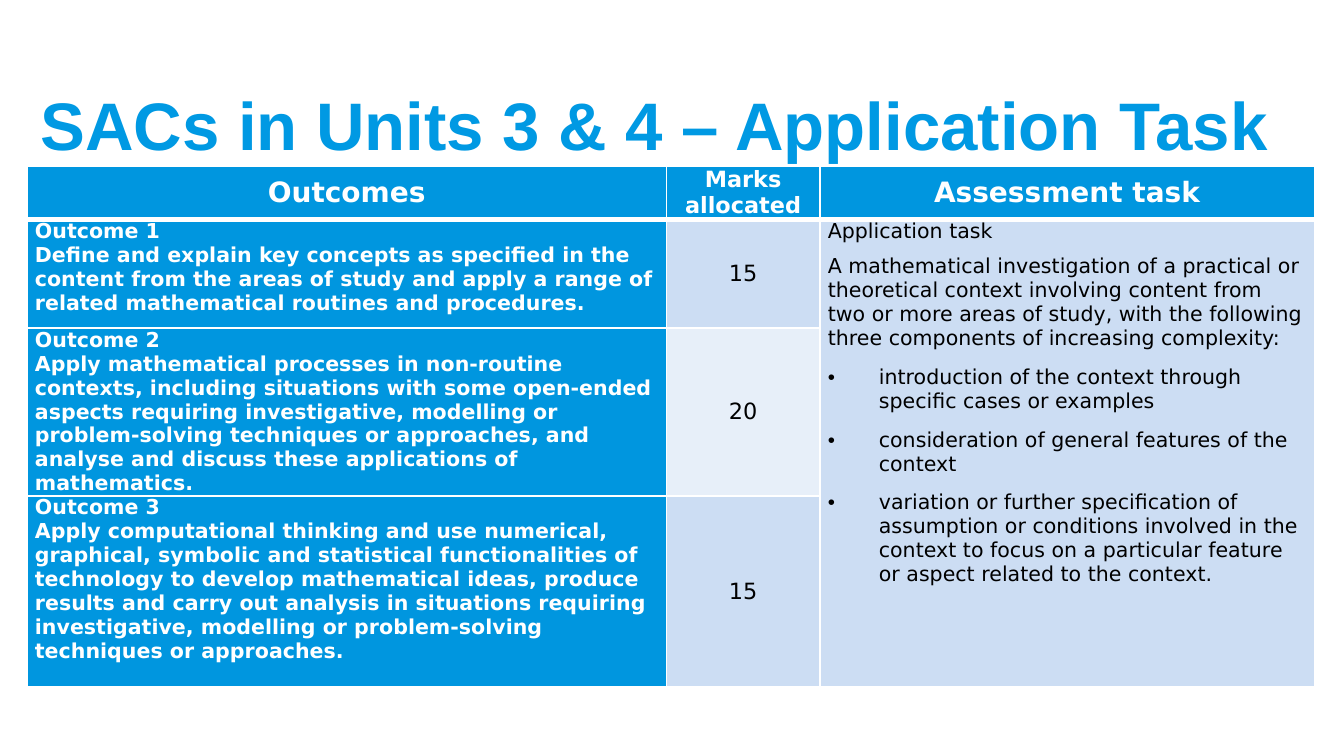
import pptx
import pptx.dml.color
import pptx.enum.text
import pptx.oxml
import pptx.oxml.ns
import pptx.util
from pptx.util import Inches

ALIGN = pptx.enum.text.PP_ALIGN
ANCHOR = pptx.enum.text.MSO_ANCHOR
NAMESPACE = pptx.oxml.ns.nsdecls("a")
WHITE, BLACK = "FFFFFF", "000000"
TITLE_BLUE, BLUE, LIGHT, PALE = "0099E3", "0096DF", "CCDDF3", "E7EFF9"
COLUMN_WIDTHS = [4.76, 1.14, 3.68]
ROW_HEIGHTS = [0.36, 0.81, 1.08, 1.42]
HEADER_BORDERS = {"lnL": 1, "lnR": 1, "lnT": 1, "lnB": 3}

HEADERS = [("Outcomes", 15, ANCHOR.MIDDLE), ("Marks allocated", 12, ANCHOR.TOP),
           ("Assessment task", 15, ANCHOR.MIDDLE)]
OUTCOMES = [
    ("Outcome 1", "Define and explain key concepts as specified in the content from the areas of "
     "study and apply a range of related mathematical routines and procedures.", "15", LIGHT),
    ("Outcome 2", "Apply mathematical processes in non-routine contexts, including situations with "
     "some open-ended aspects requiring investigative, modelling or problem-solving techniques or "
     "approaches, and analyse and discuss these applications of mathematics.", "20", PALE),
    ("Outcome 3", "Apply computational thinking and use numerical, graphical, symbolic and "
     "statistical functionalities of technology to develop mathematical ideas, produce results and "
     "carry out analysis in situations requiring investigative, modelling or problem-solving "
     "techniques or approaches.", "15", LIGHT),
]
TASK = "Application task"
TASK_SUMMARY = ("A mathematical investigation of a practical or theoretical context involving "
                "content from two or more areas of study, with the following three components of "
                "increasing complexity:")
COMPONENTS = [
    "introduction of the context through specific cases or examples",
    "consideration of general features of the context",
    "variation or further specification of assumption or conditions involved in the context to "
    "focus on a particular feature or aspect related to the context.",
]


def rgb(value):
    return pptx.dml.color.RGBColor.from_string(value)


def set_attributes(target, values):
    for name, value in values.items():
        setattr(target, name, value)


def format_font(paragraph, size, color, bold, name="DejaVu Sans"):
    for run in paragraph.runs:
        set_attributes(run.font, {"name": name, "size": pptx.util.Pt(size), "bold": bold})
        run.font.color.rgb = rgb(color)


def add_bullet(paragraph):
    properties = paragraph._p.get_or_add_pPr()
    properties.set("marL", str(Inches(0.38)))
    properties.set("indent", str(-Inches(0.38)))
    for content in ('<a:buFont {} typeface="Arial"/>', '<a:buChar {} char="•"/>',
                    '<a:tabLst {}><a:tab pos="%d" algn="l"/></a:tabLst>' % Inches(0.3)):
        properties.append(pptx.oxml.parse_xml(content.format(NAMESPACE)))


def write_cell(cell, texts, size, color=WHITE, bold=True, align=ALIGN.LEFT,
               anchor=ANCHOR.TOP, before=0, after=0, bullets_from=None):
    cell.vertical_anchor = anchor
    frame = cell.text_frame
    for index, text in enumerate(texts):
        paragraph = frame.add_paragraph() if index else frame.paragraphs[0]
        paragraph.text = text
        if bullets_from is not None and index >= bullets_from:
            add_bullet(paragraph)
        set_attributes(paragraph, {
            "alignment": align,
            "space_before": pptx.util.Pt(before if index else 0),
            "space_after": pptx.util.Pt(after),
        })
        format_font(paragraph, size, color, bold)


def style_cell(cell, fill):
    set_attributes(cell, {"margin_left": Inches(0.06), "margin_right": Inches(0.06),
                          "margin_top": 0, "margin_bottom": 0})
    cell.fill.solid()
    cell.fill.fore_color.rgb = rgb(fill)


def add_header_borders(cell):
    properties = cell._tc.get_or_add_tcPr()
    for index, (side, width) in enumerate(HEADER_BORDERS.items()):
        properties.insert(index, pptx.oxml.parse_xml(
            f'<a:{side} {NAMESPACE} w="{pptx.util.Pt(width)}"><a:solidFill>'
            f'<a:srgbClr val="{WHITE}"/></a:solidFill></a:{side}>'))


def add_title(slide, text):
    title = slide.shapes.title
    set_attributes(title, {"left": Inches(0.2), "top": Inches(0.45),
                           "width": Inches(9.53), "height": Inches(0.94)})
    set_attributes(title.text_frame, {"text": text, "word_wrap": True,
                                      "vertical_anchor": ANCHOR.MIDDLE,
                                      "auto_size": pptx.enum.text.MSO_AUTO_SIZE.NONE})
    paragraph = title.text_frame.paragraphs[0]
    paragraph.alignment = ALIGN.LEFT
    format_font(paragraph, 36, TITLE_BLUE, True, "Arial")


def add_outcomes_table(slide):
    table = slide.shapes.add_table(
        len(ROW_HEIGHTS), len(COLUMN_WIDTHS), Inches(0.2), Inches(1.24),
        Inches(sum(COLUMN_WIDTHS)), Inches(sum(ROW_HEIGHTS))).table
    for column, width in zip(table.columns, COLUMN_WIDTHS):
        column.width = Inches(width)
    for row, height in zip(table.rows, ROW_HEIGHTS):
        row.height = Inches(height)

    for column, (text, size, anchor) in enumerate(HEADERS):
        cell = table.cell(0, column)
        write_cell(cell, [text], size, align=ALIGN.CENTER, anchor=anchor, after=4)
        style_cell(cell, BLUE)
        add_header_borders(cell)

    for row, (name, description, marks, marks_fill) in enumerate(OUTCOMES, 1):
        write_cell(table.cell(row, 0), [name, description], 11)
        write_cell(table.cell(row, 1), [marks], 12, BLACK, False,
                   ALIGN.CENTER, ANCHOR.MIDDLE, after=4)
        for column, fill in enumerate([BLUE, marks_fill, LIGHT]):
            style_cell(table.cell(row, column), fill)

    task_cell = table.cell(1, 2)
    task_cell.merge(table.cell(3, 2))
    write_cell(task_cell, [TASK, TASK_SUMMARY, *COMPONENTS], 11, BLACK, False,
               before=4, after=4, bullets_from=2)
    task_cell.text_frame.paragraphs[0].space_after = pptx.util.Pt(2)


def main():
    presentation = pptx.Presentation()
    set_attributes(presentation, {"slide_width": Inches(10),
                                  "slide_height": Inches(10) * 9 // 16})
    slide = presentation.slides.add_slide(presentation.slide_layouts[5])
    add_title(slide, "SACs in Units 3 & 4 – Application Task")
    add_outcomes_table(slide)
    presentation.save("out.pptx")


if __name__ == "__main__":
    main()
